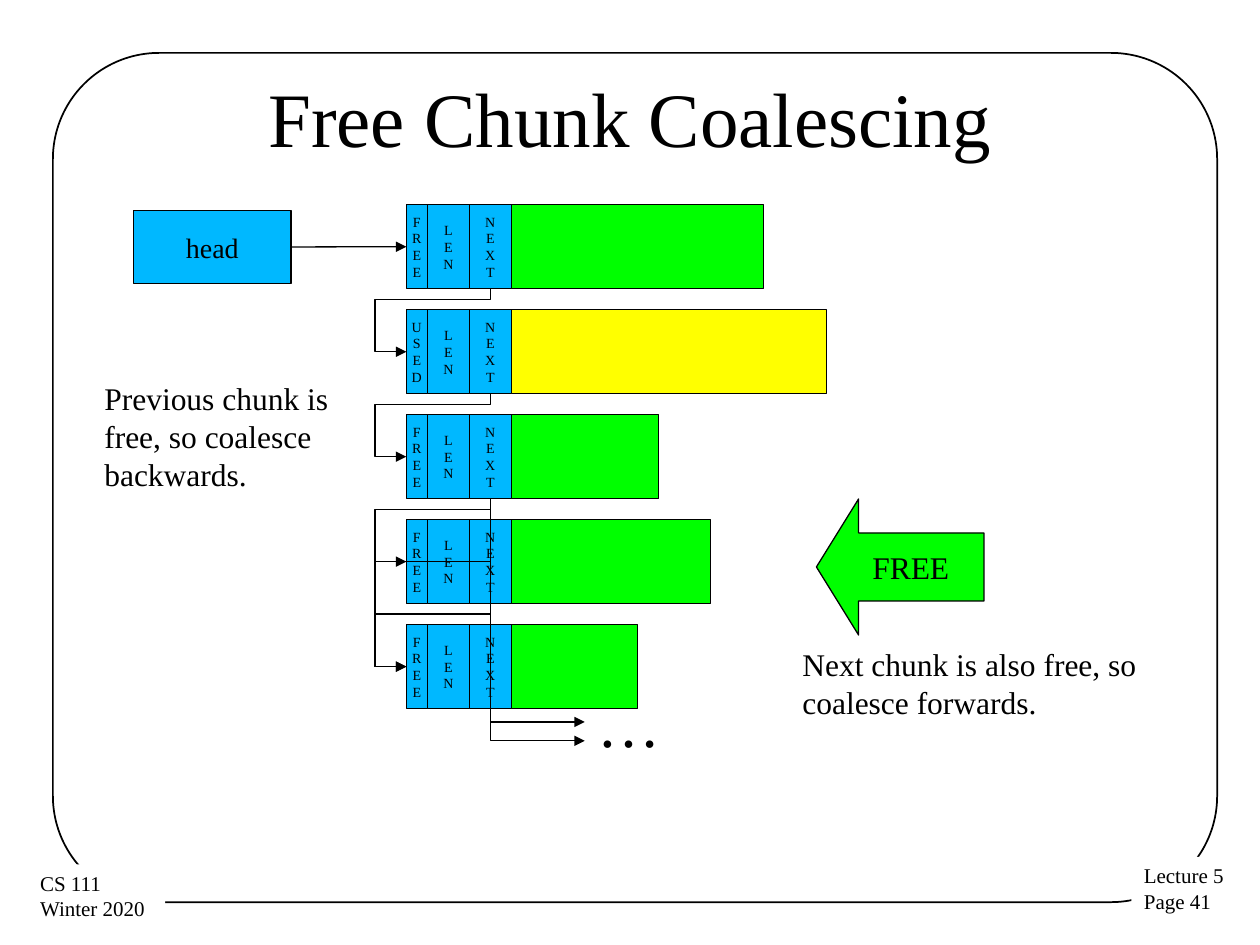
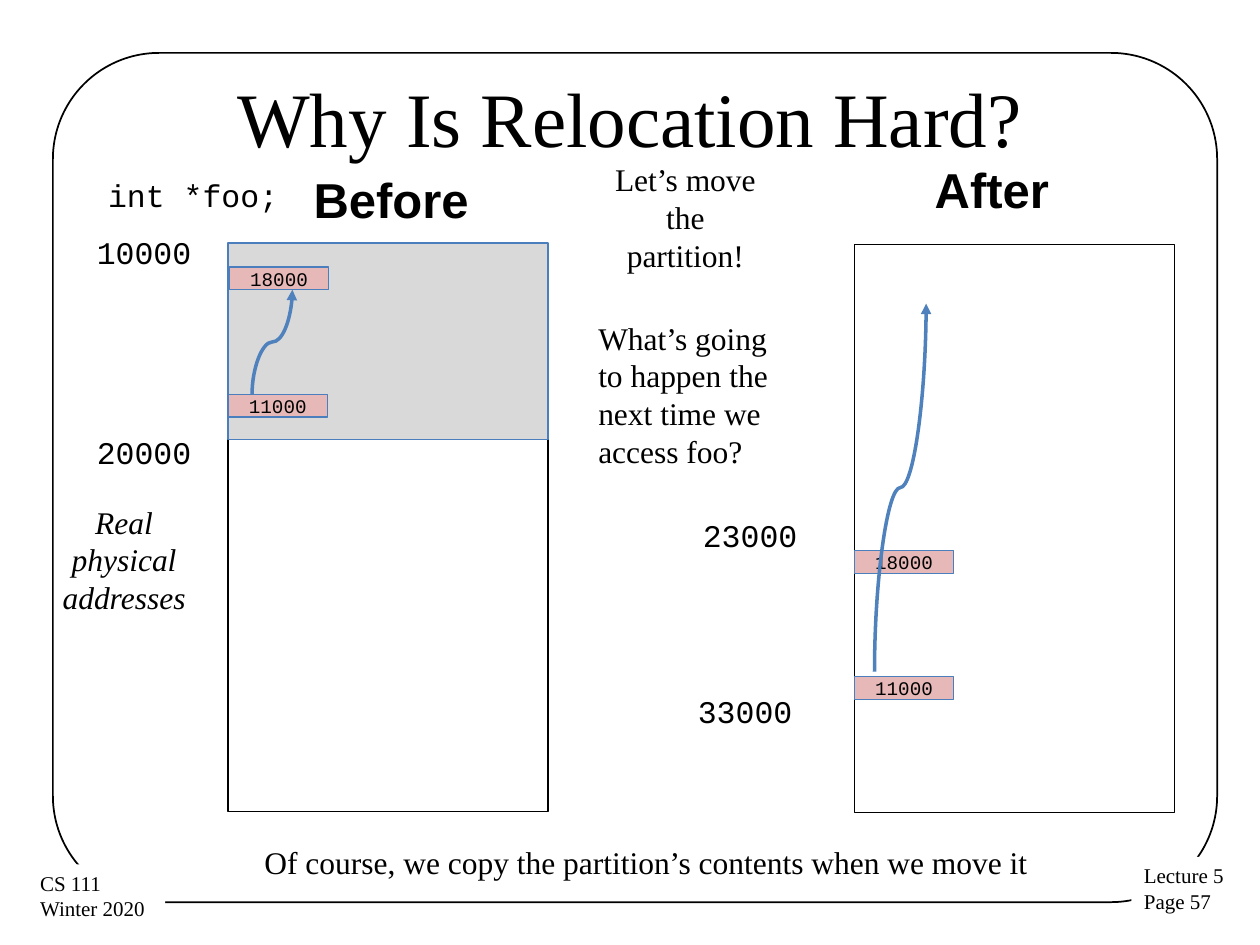
import pptx
import pptx.dml.color
import pptx.enum.shapes
import pptx.enum.text
import pptx.oxml
import pptx.oxml.ns
import pptx.util
from lxml import etree

COLOURS = {
    "ink": "000000", "paper": "FFFFFF", "header": "00B8FF", "free": "00FF00",
    "used": "FFFF00", "partition": "D9D9D9", "pointer": "E6B9B8",
    "edge": "4B7EBC", "arrow": "4F81BD",
}
SERIF, MONO, SANS = "Times New Roman", "Courier New", "Arial"
COLUMNS, ROWS = 100, 75

SHAPE = pptx.enum.shapes.MSO_SHAPE
CONNECTOR = pptx.enum.shapes.MSO_CONNECTOR
ALIGN = pptx.enum.text.PP_ALIGN
ANCHOR = pptx.enum.text.MSO_ANCHOR
qn = pptx.oxml.ns.qn


def colour(name):
    return pptx.dml.color.RGBColor.from_string(COLOURS[name])


class Deck:
    """Shared style and the current slide; all lengths are grid columns and rows."""

    def __init__(self):
        self.presentation = pptx.Presentation()
        self.presentation.slide_width = pptx.util.Inches(10)
        self.presentation.slide_height = pptx.util.Inches(7.5)
        self.slide = None

    def x(self, columns):
        return round(self.presentation.slide_width * columns / COLUMNS)

    def y(self, rows):
        return round(self.presentation.slide_height * rows / ROWS)

    def place(self, box):
        left, top, width, height = box
        return self.x(left), self.y(top), self.x(width), self.y(height)

    def new_slide(self, title, page):
        self.slide = self.presentation.slides.add_slide(self.presentation.slide_layouts[6])
        frame = self.shape((4.2, 4.2, 92.4, 67.4), None, kind=SHAPE.ROUNDED_RECTANGLE, weight=1)
        frame.adjustments[0] = 0.125
        for box, lines in (((89.8, 68, 8.5, 5.1), ["Lecture 5", f"Page {page}"]),
                           ((2.2, 68.6, 10.9, 5.1), ["CS 111", "Winter 2020"])):
            footer = self.shape(box, "paper", edge=None)
            self.add_lines(footer, lines, 12, align=ALIGN.LEFT, anchor=ANCHOR.TOP, grow=True)
        self.text((5, 3, 90, 12.5), title, 44, align=ALIGN.CENTER,
                  anchor=ANCHOR.MIDDLE, wrap=True, grow=False)

    def add_lines(self, shape, lines, size, font=SERIF, align=ALIGN.CENTER,
                  anchor=ANCHOR.MIDDLE, wrap=False, grow=False, bold=False, italic=False):
        frame = shape.text_frame
        frame.word_wrap = wrap
        frame.vertical_anchor = anchor
        if grow:
            frame.auto_size = pptx.enum.text.MSO_AUTO_SIZE.SHAPE_TO_FIT_TEXT
        for index, line in enumerate(lines):
            paragraph = frame.add_paragraph() if index else frame.paragraphs[0]
            paragraph.alignment = align
            run = paragraph.add_run()
            run.text = line
            run.font.size = pptx.util.Pt(size)
            run.font.name = font
            run.font.bold = bold
            run.font.italic = italic
            run.font.color.rgb = colour("ink")

    def text(self, box, line, size=18, align=ALIGN.LEFT, anchor=ANCHOR.TOP,
             grow=True, **style):
        text_box = self.slide.shapes.add_textbox(*self.place(box))
        self.add_lines(text_box, [line], size, align=align, anchor=anchor, grow=grow, **style)

    def shape(self, box, fill, edge="ink", kind=SHAPE.RECTANGLE, weight=0.75):
        shape = self.slide.shapes.add_shape(kind, *self.place(box))
        shape.shadow.inherit = False
        if fill:
            shape.fill.solid()
            shape.fill.fore_color.rgb = colour(fill)
        else:
            shape.fill.background()
        if edge:
            shape.line.color.rgb = colour(edge)
            shape.line.width = pptx.util.Pt(weight)
        else:
            shape.line.fill.background()
        return shape

    def labelled(self, box, fill, lines, size, edge="ink", **style):
        shape = self.shape(box, fill, edge)
        self.add_lines(shape, lines, size, **style)
        return shape

    def arrow(self, kind, ends, ink="ink", weight=0.75):
        connector = self.slide.shapes.add_connector(kind, *ends)
        connector.line.color.rgb = colour(ink)
        connector.line.width = pptx.util.Pt(weight)
        properties = connector.element.spPr
        tail = etree.SubElement(properties.find(qn("a:ln")), qn("a:tailEnd"))
        tail.set("type", "triangle")
        etree.SubElement(properties, qn("a:effectLst"))
        return connector

    def straight_arrow(self, source, target):
        """Join the right side of source to the left side of target."""
        connector = self.arrow(CONNECTOR.STRAIGHT, (0, 0, 0, 0))
        connector.begin_connect(source, 3)
        connector.end_connect(target, 1)

    def turned_arrow(self, preset, start, end, turn, flips="", bends=(), **line):
        """Arrow that leaves start vertically: its box is turned about its centre."""
        x1, y1, x2, y2 = self.x(start[0]), self.y(start[1]), self.x(end[0]), self.y(end[1])
        width, height = abs(y2 - y1), abs(x2 - x1)
        left, top = (x1 + x2 - width) // 2, (y1 + y2 - height) // 2
        kind = CONNECTOR.CURVE if preset.startswith("curved") else CONNECTOR.ELBOW
        connector = self.arrow(kind, (left, top, left + width, top + height), **line)
        properties = connector.element.spPr
        transform = properties.find(qn("a:xfrm"))
        transform.set("rot", str(turn * 60000))
        for flip in flips:
            transform.set("flip" + flip, "1")
        geometry = properties.find(qn("a:prstGeom"))
        geometry.set("prst", preset)
        for number, bend in enumerate(bends, 1):
            guide = etree.SubElement(geometry.find(qn("a:avLst")), qn("a:gd"))
            guide.set("name", f"adj{number}")
            guide.set("fmla", f"val {round(bend * 100000)}")


def build_coalescing(deck):
    deck.new_slide("Free Chunk Coalescing", 41)
    head = deck.labelled((10.6, 16.7, 12.5, 5.8), "header", ["head"], 16)

    left, first_top, pitch, height = 32.25, 16.25, 8.33, 6.67
    fields = (1.67, 3.33, 3.33)
    next_x = left + sum(fields) - fields[-1] / 2
    chunks = (("FREE", 20), ("USED", 25), ("FREE", 11.7), ("FREE", 15.8), ("FREE", 10))
    tops = [first_top + pitch * index for index in range(len(chunks))]
    flags = []
    for top, (state, data_width) in zip(tops, chunks):
        field_left = left
        for width, name in zip(fields, (state, "LEN", "NEXT")):
            field = deck.labelled((field_left, top, width, height), "header", list(name), 8)
            if name == state:
                flags.append(field)
            field_left += width
        deck.shape((field_left, top, data_width, height), state.lower())

    def link(source, target, first_bend):
        deck.turned_arrow("bentConnector4", (next_x, tops[source] + height),
                          (left, tops[target] + height / 2), 90, bends=(first_bend, 1.375))

    deck.straight_arrow(head, flags[0])
    for index in range(len(chunks) - 1):
        link(index, index + 1, 0.167)
    link(2, 4, 0.375)
    for source, end_y in ((4, 58.8), (2, 57.3)):
        deck.turned_arrow("bentConnector2", (next_x, tops[source] + height),
                          (46.4, end_y), 270, flips="H")

    deck.text((46.4, 53.8, 10.8, 7), "…", 36, wrap=True)
    deck.text((7.3, 29.6, 20.5, 17.2), "Previous chunk is free, so coalesce backwards.", wrap=True)
    deck.text((62.7, 50.7, 28.6, 13.1), "Next chunk is also free, so coalesce forwards.", wrap=True)
    free_call = deck.shape((64.8, 39.6, 13.3, 10.8), "free", kind=SHAPE.LEFT_ARROW)
    free_call.adjustments[0] = 0.5
    free_call.adjustments[1] = 0.31
    deck.add_lines(free_call, ["FREE"], 18)


def build_relocation(deck):
    deck.new_slide("Why Is Relocation Hard?", 57)
    for left, top in ((67.8, 19.4), (18.1, 19.3)):
        deck.shape((left, top, 25.4, 45.1), "paper")
    deck.shape((18.1, 19.3, 25.4, 15.6), "partition", "edge")

    for left, top, address in ((6.7, 18, "10000"), (6.7, 33.9, "20000"),
                               (54.8, 40.5, "23000"), (54.4, 54.4, "33000")):
        deck.text((left, top, 9.6, 4), address, font=MONO)
    deck.text((7.6, 13.5, 15.6, 4), "int *foo;", font=MONO)

    for left, top, value in ((18.1, 31.3, "11000"), (18.2, 21.2, "18000"),
                             (67.8, 43.7, "18000"), (67.8, 53.7, "11000")):
        deck.labelled((left, top, 7.9, 1.8), "pointer", [value], 11, "edge",
                      font=MONO, wrap=True)
    for start, end in (((20, 31.3), (23.2, 23)), ((69.4, 53.3), (73.5, 24.1))):
        deck.turned_arrow("curvedConnector3", start, end, 90, flips="HV", bends=(0.5,),
                          ink="arrow", weight=2)

    deck.text((3.3, 39.4, 13.1, 10.1), "Real physical addresses",
              align=ALIGN.CENTER, wrap=True, italic=True)
    deck.text((47.8, 12.2, 13.2, 10.1), "Let’s move the partition!",
              align=ALIGN.CENTER, wrap=True)
    deck.text((46.5, 24.8, 15.7, 13.1), "What’s going to happen the next time we access foo?",
              wrap=True)
    deck.text((20, 66.4, 63.2, 4), "Of course, we copy the partition’s contents when we move it")
    deck.text((23.9, 13, 14.5, 5.7), "Before", 28, font=SANS, bold=True)
    deck.text((73.2, 12.2, 11.2, 5.7), "After", 28, font=SANS, bold=True)


def main():
    deck = Deck()
    build_coalescing(deck)
    build_relocation(deck)
    deck.presentation.save("out.pptx")


if __name__ == "__main__":
    main()
